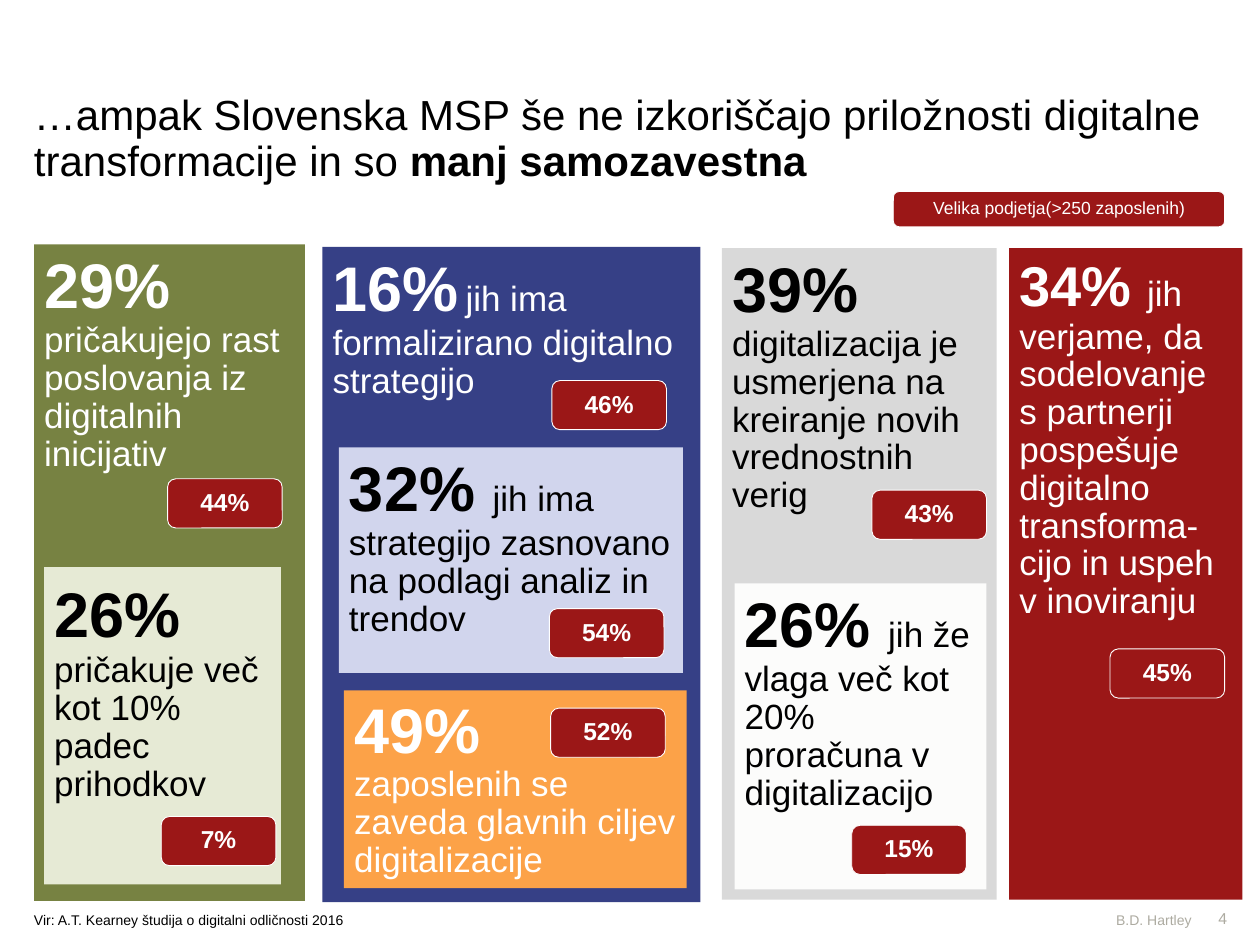
"""Build the slide on digital transformation in Slovenian small and medium firms."""
from dataclasses import dataclass
from typing import NamedTuple

from pptx import Presentation
from pptx.dml.color import RGBColor
from pptx.enum.shapes import MSO_SHAPE
from pptx.enum.text import MSO_ANCHOR, PP_ALIGN
from pptx.util import Pt

EMU_PER_PX = 9144


@dataclass(frozen=True)
class Theme:
    font: str = "Arial"
    white: str = "FFFFFF"
    black: str = "000000"
    muted: str = "ADABA1"
    red: str = "9B1717"
    blue: str = "364086"
    pale_blue: str = "D1D5ED"
    green: str = "778242"
    pale_green: str = "E6EAD5"
    grey: str = "D9D9D9"
    off_white: str = "FCFCFB"
    orange: str = "FCA248"
    title: int = 24
    figure: int = 36
    small_figure: int = 32
    statement: int = 20
    badge: int = 14
    legend: int = 10
    page_number: int = 9
    footnote: int = 8


THEME = Theme()


class Area(NamedTuple):
    left: int
    top: int
    width: int
    height: int


class Span(NamedTuple):
    text: str
    size: int
    bold: bool = False


@dataclass(frozen=True)
class Panel:
    area: Area
    fill: str
    color: str
    figure: str
    statement: str
    figure_size: int = THEME.figure
    gap_size: int = THEME.figure
    stacked: bool = False


@dataclass(frozen=True)
class Badge:
    text: str
    left: int
    top: int


PANELS = [
    Panel(Area(256, 196, 300, 520), THEME.blue, THEME.white, "16%",
          "jih ima formalizirano digitalno strategijo", gap_size=14),
    Panel(Area(801, 197, 185, 517), THEME.red, THEME.white, "34%",
          "jih verjame, da sodelovanje s partnerji pospešuje digitalno "
          "transforma-cijo in uspeh v inoviranju",
          figure_size=THEME.small_figure, gap_size=THEME.small_figure),
    Panel(Area(27, 194, 215, 521), THEME.green, THEME.white, "29%",
          "pričakujejo rast poslovanja iz digitalnih inicijativ"),
    Panel(Area(35, 450, 188, 252), THEME.pale_green, THEME.black, "26%",
          "pričakuje več kot 10% padec prihodkov", gap_size=40),
    Panel(Area(269, 355, 273, 179), THEME.pale_blue, THEME.black, "32%",
          "jih ima strategijo zasnovano na podlagi analiz in trendov"),
    Panel(Area(573, 197, 218, 517), THEME.grey, THEME.black, "39%",
          "digitalizacija je usmerjena na kreiranje novih vrednostnih verig",
          gap_size=14),
    Panel(Area(583, 463, 200, 243), THEME.off_white, THEME.black, "26%",
          "jih že vlaga več kot 20% proračuna v digitalizacijo"),
    Panel(Area(273, 548, 272, 157), THEME.orange, THEME.white, "49%",
          "zaposlenih se zaveda glavnih ciljev digitalizacije", stacked=True),
]

BADGES = [
    Badge("46%", 438, 302),
    Badge("44%", 133, 380),
    Badge("7%", 128, 648),
    Badge("54%", 436, 483),
    Badge("45%", 881, 515),
    Badge("43%", 692, 389),
    Badge("15%", 676, 655),
    Badge("52%", 437, 562),
]


def px(length: int) -> int:
    """Turn whole pixels into EMU."""
    return length * EMU_PER_PX


def write_text(box, paragraphs: list[list[Span]], *, color: str, inset: int = 0,
               align=PP_ALIGN.LEFT, anchor=MSO_ANCHOR.TOP, wrap: bool = True,
               spacing: float = 0.9) -> None:
    """Fill a box with paragraphs of formatted spans."""
    frame = box.text_frame
    frame.word_wrap = wrap
    frame.vertical_anchor = anchor
    frame.margin_left = frame.margin_right = px(inset)
    frame.margin_top = frame.margin_bottom = px(inset)
    for index, spans in enumerate(paragraphs):
        para = frame.add_paragraph() if index else frame.paragraphs[0]
        para.alignment = align
        para.line_spacing = spacing
        for span in spans:
            run = para.add_run()
            run.text = span.text
            run.font.name = THEME.font
            run.font.size = Pt(span.size)
            run.font.bold = span.bold
            run.font.color.rgb = RGBColor.from_string(color)


def add_text(page, area: Area, spans: list[Span], **text_format):
    """Add a plain text box."""
    box = page.shapes.add_textbox(*map(px, area))
    write_text(box, [spans], **text_format)


def add_block(page, kind, area: Area, fill: str):
    """Add a filled shape without outline or shadow."""
    block = page.shapes.add_shape(kind, *map(px, area))
    block.shadow.inherit = False
    block.fill.solid()
    block.fill.fore_color.rgb = RGBColor.from_string(fill)
    block.line.fill.background()
    return block


def draw_panel(page, panel: Panel) -> None:
    """Draw a panel with its large figure and statement."""
    block = add_block(page, MSO_SHAPE.RECTANGLE, panel.area, panel.fill)
    figure = Span(panel.figure, panel.figure_size, True)
    statement = Span(panel.statement, THEME.statement)
    if panel.stacked:
        paragraphs, anchor = [[figure], [statement]], MSO_ANCHOR.MIDDLE
    else:
        gap = Span(" ", panel.gap_size, True)
        paragraphs, anchor = [[figure, gap, statement]], MSO_ANCHOR.TOP
    write_text(block, paragraphs, color=panel.color, inset=8, anchor=anchor)


def draw_pill(page, area: Area, span: Span) -> None:
    """Draw a red rounded label with a thin white outline."""
    pill = add_block(page, MSO_SHAPE.ROUNDED_RECTANGLE, area, THEME.red)
    pill.line.color.rgb = RGBColor.from_string(THEME.white)
    pill.line.width = Pt(0.5)
    write_text(pill, [[span]], color=THEME.white, inset=8,
               align=PP_ALIGN.CENTER, anchor=MSO_ANCHOR.MIDDLE)


def main() -> None:
    """Assemble and save the deck."""
    deck = Presentation()
    deck.slide_width, deck.slide_height = px(1000), px(750)
    page = deck.slides.add_slide(deck.slide_layouts[6])
    footer = dict(color=THEME.muted, align=PP_ALIGN.RIGHT,
                  anchor=MSO_ANCHOR.BOTTOM, wrap=False, spacing=1.0)
    add_text(page, Area(880, 723, 66, 14),
             [Span("B.D. Hartley", THEME.footnote)], **footer)
    add_text(page, Area(945, 721, 29, 15),
             [Span("4", THEME.page_number)], **footer)
    add_text(page, Area(27, 75, 946, 73), [
        Span("…ampak Slovenska MSP še ne izkoriščajo priložnosti digitalne "
             "transformacije in so ", THEME.title),
        Span("manj samozavestna", THEME.title, True),
    ], color=THEME.black)
    for panel in PANELS:
        draw_panel(page, panel)
    for badge in BADGES:
        draw_pill(page, Area(badge.left, badge.top, 91, 39),
                  Span(badge.text, THEME.badge, True))
    draw_pill(page, Area(709, 152, 263, 28),
              Span("Velika podjetja(>250 zaposlenih)", THEME.legend))
    add_text(page, Area(27, 697, 700, 40), [
        Span("Vir: A.T. Kearney študija o digitalni odličnosti 2016",
             THEME.footnote),
    ], color=THEME.black, anchor=MSO_ANCHOR.BOTTOM)
    deck.save("out.pptx")


if __name__ == "__main__":
    main()
